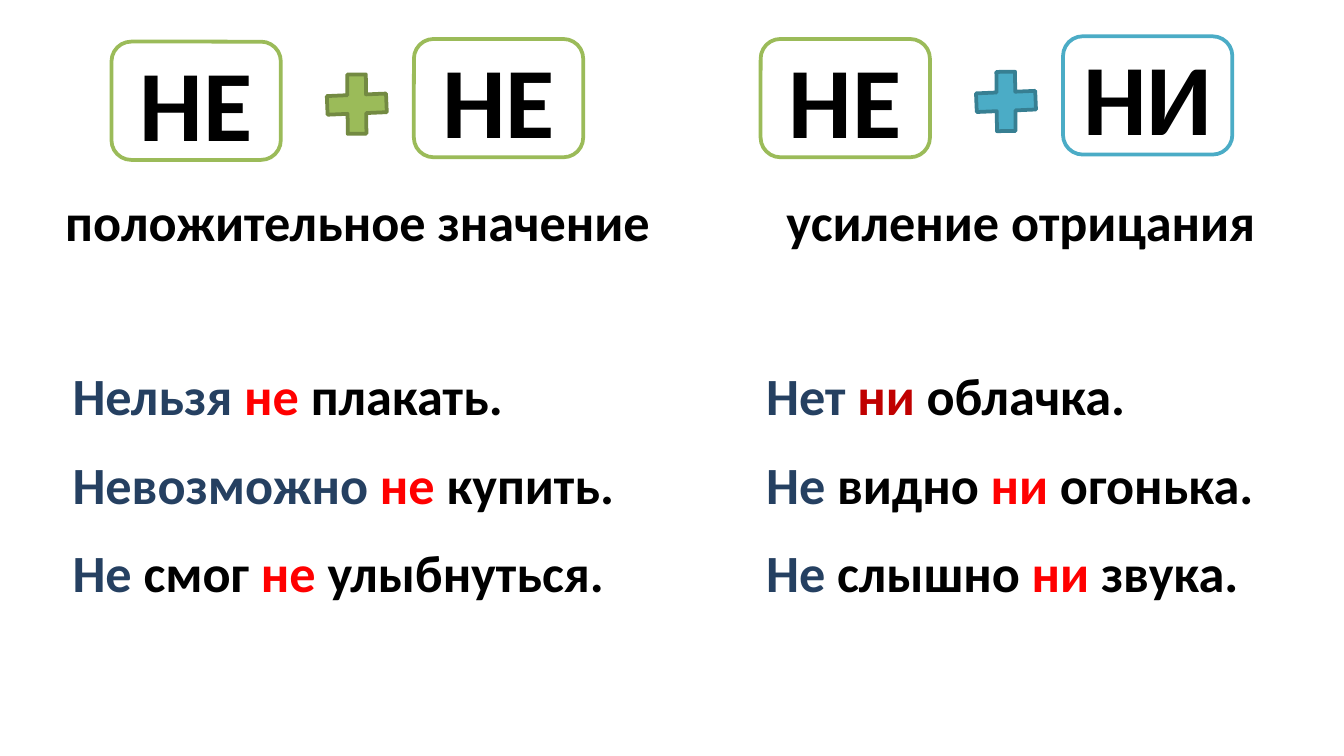
from dataclasses import dataclass

from lxml.etree import SubElement
from pptx import Presentation
from pptx.dml.color import RGBColor
from pptx.enum.shapes import MSO_SHAPE as Shape
from pptx.enum.text import MSO_ANCHOR as Anchor, PP_ALIGN as Align
from pptx.oxml.ns import qn
from pptx.util import Inches, Pt


@dataclass(frozen=True)
class Theme:
    font: str = "Calibri"
    particle_size: int = 54
    text_size: int = 28
    outline: int = 2
    paper: str = "FFFFFF"
    ink: str = "000000"
    navy: str = "254061"
    red: str = "FF0000"
    dark_red: str = "C00000"
    green: str = "9BBB59"
    green_edge: str = "738A42"
    blue: str = "4BACC6"
    blue_edge: str = "377F92"


THEME = Theme()
INK, NAVY, RED, DARK_RED = THEME.ink, THEME.navy, THEME.red, THEME.dark_red

RULES = [
    {
        "particles": [("НЕ", THEME.green), ("НЕ", THEME.green)],
        "plus": (THEME.green, THEME.green_edge),
        "meaning": "положительное значение",
        "examples": [
            [("Нельзя ", NAVY), ("не", RED), (" плакать.", INK)],
            [("Невозможно ", NAVY), ("не ", RED), ("купить.", INK)],
            [("Не", NAVY), (" смог ", INK), ("не ", RED), ("улыбнуться.", INK)],
        ],
        "formula_at": (0.83, 0.31),
        "meaning_span": (0.26, 4.8),
        "examples_span": (0.41, 4.49),
    },
    {
        "particles": [("НЕ", THEME.green), ("НИ", THEME.blue)],
        "plus": (THEME.blue, THEME.blue_edge),
        "meaning": "усиление отрицания",
        "examples": [
            [("Нет", NAVY), (" ни ", DARK_RED), ("облачка.", INK)],
            [("Не ", NAVY), ("видно ", INK), ("ни ", RED), ("огонька.", INK)],
            [("Не", NAVY), (" слышно ", INK), ("ни ", RED), ("звука.", INK)],
        ],
        "formula_at": (5.66, 0.29),
        "meaning_span": (5.35, 4.49),
        "examples_span": (5.57, 4.08),
    },
]

SLIDE_WIDTH = Inches(10)
SLIDE_HEIGHT = SLIDE_WIDTH * 9 // 16
PARTICLE_SIZE = (1.26, 0.88)
PARTICLE_STEP = (2.25, -0.02)
PLUS_OFFSET, PLUS_SIZE, PLUS_TURN = (1.53, 0.16), (0.59, 0.61), 43.5
MEANING_TOP, MEANING_HEIGHT = 1.25, 0.79
EXAMPLE_TOP, EXAMPLE_STEP, EXAMPLE_HEIGHT = 2.61, 0.66, 0.65


def add_figure(slide, kind, box, fill, edge=None):
    figure = slide.shapes.add_shape(kind, *map(Inches, box))
    figure.shadow.inherit = False
    figure.fill.solid()
    figure.fill.fore_color.rgb = RGBColor.from_string(fill)
    if edge:
        figure.line.color.rgb = RGBColor.from_string(edge)
        figure.line.width = Pt(THEME.outline)
    else:
        figure.line.fill.background()
    return figure


def add_label(slide, box, pieces, size, align, edge=None, wrap=True):
    """Add a rounded box holding one line of (text, colour) pieces."""
    frame = add_figure(slide, Shape.ROUNDED_RECTANGLE, box, THEME.paper, edge).text_frame
    frame.word_wrap = wrap
    frame.vertical_anchor = Anchor.MIDDLE
    line = frame.paragraphs[0]
    line.alignment = align
    space_before = SubElement(line._p.get_or_add_pPr(), qn("a:spcBef"))
    SubElement(space_before, qn("a:spcPct")).set("val", "20000")
    for text, color in pieces:
        run = line.add_run()
        run.text = text
        run.font.name = THEME.font
        run.font.size = Pt(size)
        run.font.bold = True
        run.font.color.rgb = RGBColor.from_string(color)


def add_formula(slide, rule):
    left, top = rule["formula_at"]
    for i, (particle, edge) in enumerate(rule["particles"]):
        box = (left + i * PARTICLE_STEP[0], top + i * PARTICLE_STEP[1], *PARTICLE_SIZE)
        add_label(slide, box, [(particle, INK)], THEME.particle_size,
                  Align.CENTER, edge, wrap=False)
    plus_box = (left + PLUS_OFFSET[0], top + PLUS_OFFSET[1], *PLUS_SIZE)
    add_figure(slide, Shape.MATH_MULTIPLY, plus_box, *rule["plus"]).rotation = PLUS_TURN


def add_rule(slide, rule):
    add_formula(slide, rule)
    left, width = rule["meaning_span"]
    add_label(slide, (left, MEANING_TOP, width, MEANING_HEIGHT),
              [(rule["meaning"], INK)], THEME.text_size, Align.CENTER)
    left, width = rule["examples_span"]
    for row, example in enumerate(rule["examples"]):
        top = EXAMPLE_TOP + row * EXAMPLE_STEP
        add_label(slide, (left, top, width, EXAMPLE_HEIGHT),
                  example, THEME.text_size, Align.LEFT)


def main():
    deck = Presentation()
    deck.slide_width, deck.slide_height = SLIDE_WIDTH, SLIDE_HEIGHT
    slide = deck.slides.add_slide(deck.slide_layouts[6])
    for rule in RULES:
        add_rule(slide, rule)
    deck.save("out.pptx")


if __name__ == "__main__":
    main()
